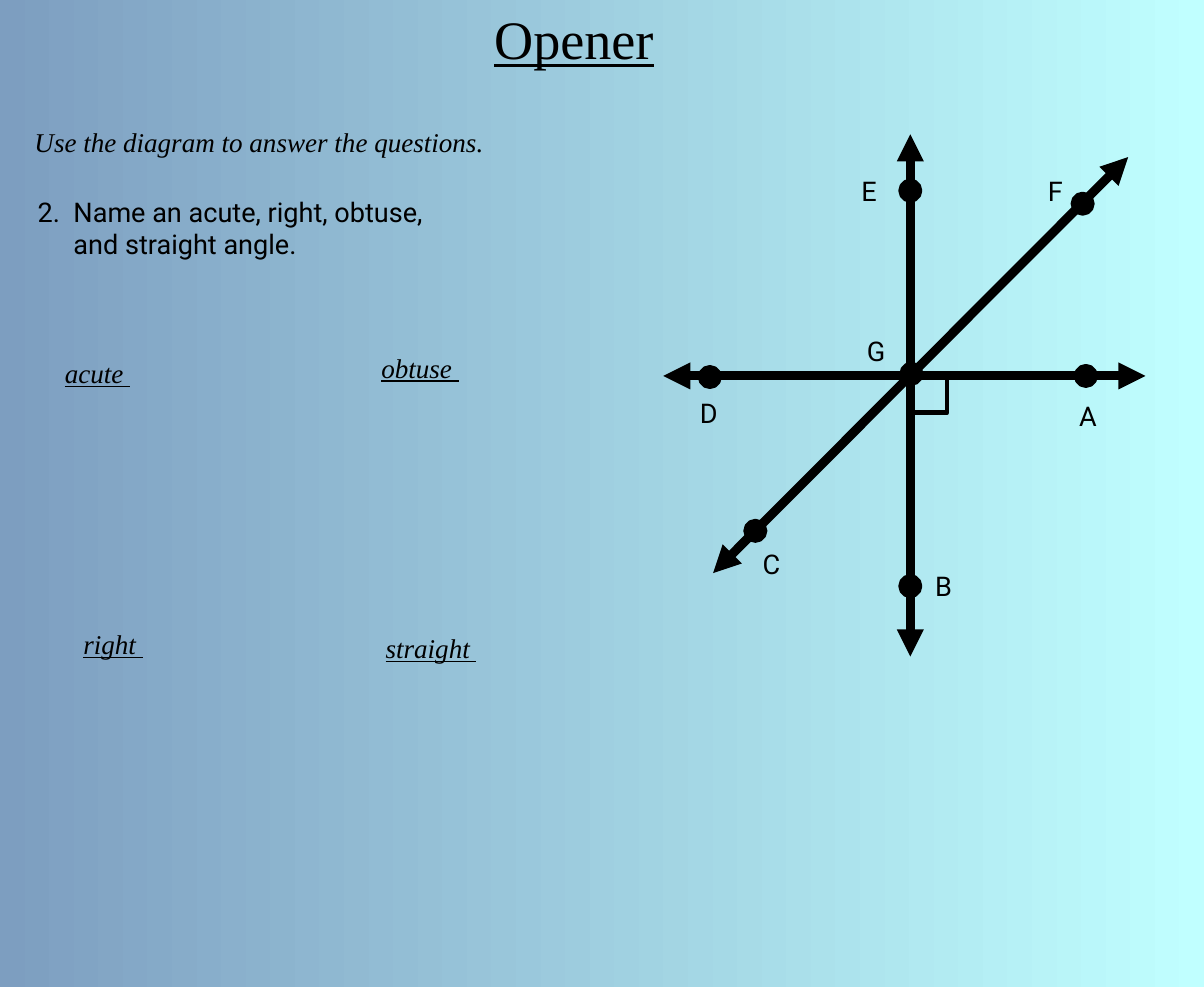
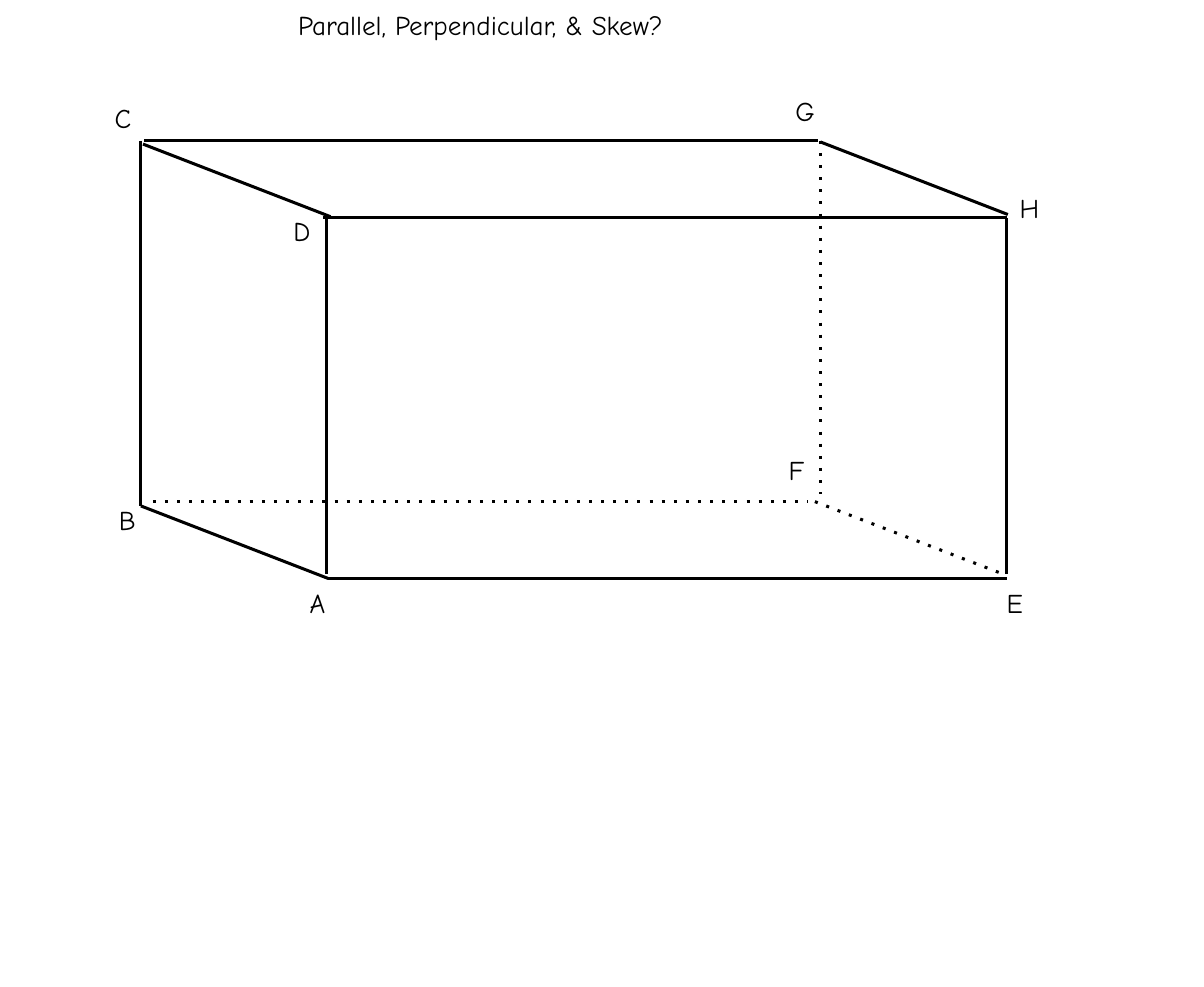
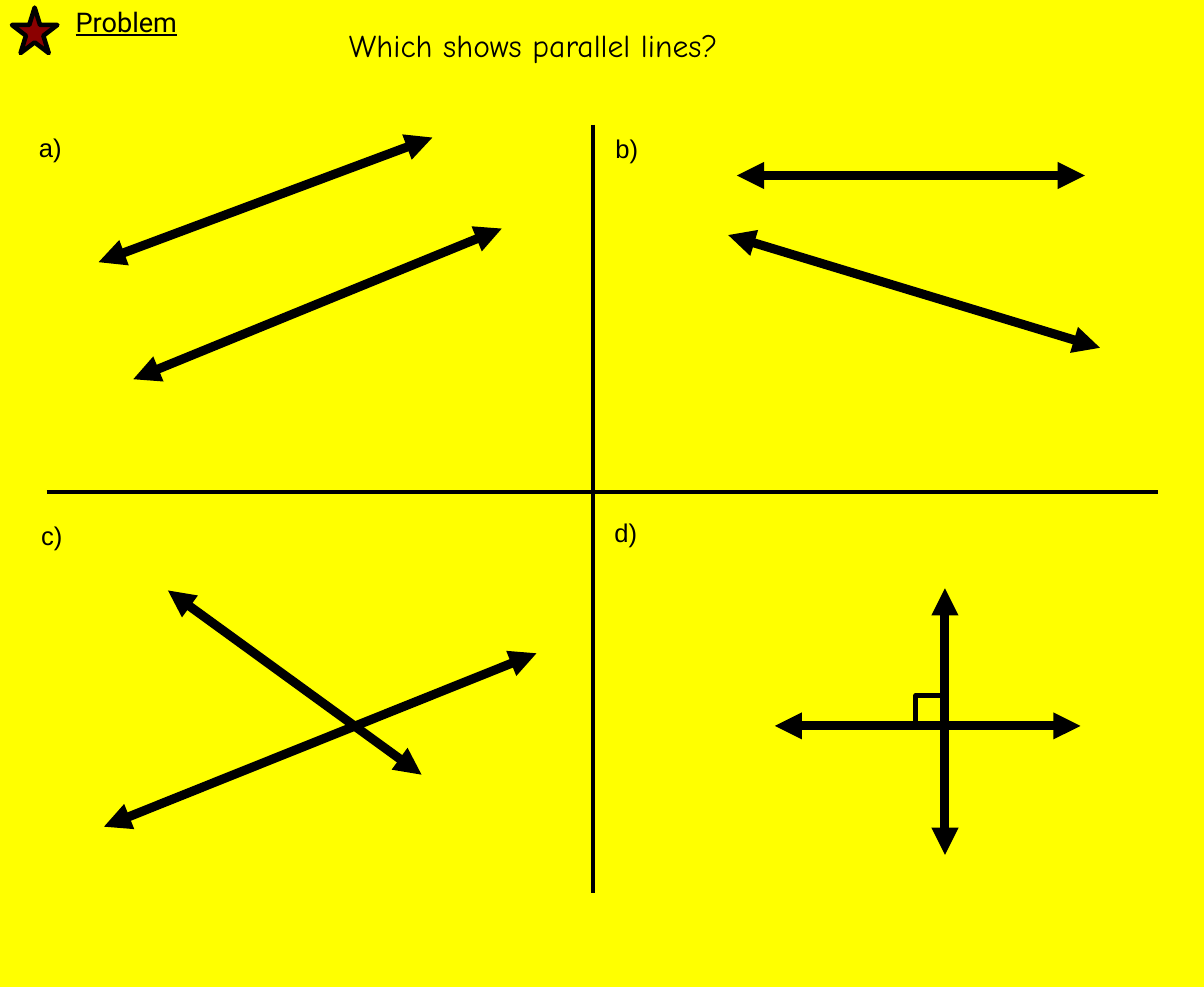
from lxml import etree
from pptx import Presentation, util as u
from pptx.dml.color import RGBColor
from pptx.enum import shapes as kinds, text as styles
from pptx.oxml import ns

PX = 9144
COLORS = {"ink": "000000", "dusk": "7D9EC0", "ice": "C0FFFF", "paper": "FFFFFF",
          "yellow": "FFFF00", "star": "8B0000"}
SERIF, SANS, HAND, PLAIN = "Times New Roman", "Roboto", "Comic Neue", "Arial"

OPENER_TITLE = ("Opener", (446, 0, 478, 71))
INSTRUCTION = ("Use the diagram to answer the questions.", (22, 111, 593, 40))
QUESTION = (["2.\tName an acute, right, obtuse,", "and straight angle."], (25, 175, 523, 71))
QUESTION_INDENT = 33
ANGLE_KINDS = [
    ("acute ", (50, 324, 97, 40)),
    ("obtuse ", (342, 319, 112, 40)),
    ("right ", (67, 574, 89, 40)),
    ("straight ", (346, 578, 130, 40)),
]
DIAGRAM_LINES = [(840, 606, 840, 124), (658, 529, 1041, 145), (612, 347, 1057, 347)]
DIAGRAM_POINTS = {
    "G": ((841, 345), (790, 304)),
    "C": ((697, 490), (694, 500)),
    "D": ((655, 348), (636, 361)),
    "E": ((840, 176), (785, 156)),
    "F": ((999, 188), (957, 156)),
    "A": ((1002, 347), (986, 364)),
    "B": ((840, 541), (853, 521)),
}
POINT_SIZE = 18
DIAGRAM_CORNER = (841, 348, 33, 33)

PRISM_TITLE = ("Parallel, Perpendicular, & Skew?", (265, 3, 523, 40))
SOLID_EDGES = {
    "CB": (130, 130, 130, 467), "BA": (130, 467, 303, 534), "AE": (303, 534, 929, 534),
    "HD": (929, 201, 298, 201), "DA": (301, 201, 301, 530), "GC": (755, 130, 133, 130),
    "CD": (132, 133, 305, 200), "GH": (757, 131, 930, 198), "EH": (929, 530, 929, 201),
}
HIDDEN_EDGES = {
    "GF": (757, 130, 757, 456), "BF": (141, 463, 745, 463), "FE": (752, 463, 926, 530),
}
PRISM_LABELS = {
    "A": (276, 536), "B": (100, 460), "C": (96, 89), "D": (261, 193),
    "E": (919, 536), "F": (718, 414), "G": (724, 82), "H": (931, 172),
}
LABEL_SIZE = (40, 40)

PROBLEM_TITLE = ("Which shows parallel lines?", (312, 19, 526, 45))
PROBLEM_TAG = ("Problem", (60, 0, 173, 40))
STAR_BOX = (11, 7, 42, 42)
DIVIDERS = [(547, 115, 547, 824), (43, 454, 1069, 454)]
CHOICES = [
    ("a)", (26, 117), [(91, 242, 399, 127), (123, 350, 463, 211)]),
    ("b)", (558, 118), [(680, 162, 1001, 162), (672, 217, 1015, 321)]),
    ("c)", (28, 475), [(155, 545, 389, 715), (96, 763, 495, 603)]),
    ("d)", (557, 472), [(872, 543, 872, 789), (715, 670, 997, 670)]),
]
CHOICE_SIZE = (75, 39)
CHOICE_CORNER = (845, 642, 27, 27)


def rgb(name):
    return RGBColor.from_string(COLORS[name])


def emu(lengths):
    return [length * PX for length in lengths]


def write(slide, content, box, font=SANS, size=18, italic=False, underline=False,
          hanging=0, title=False):
    if title:
        holder = slide.shapes.title
        holder.left, holder.top, holder.width, holder.height = emu(box)
    else:
        holder = slide.shapes.add_textbox(*emu(box))
    frame = holder.text_frame
    frame.word_wrap = True
    frame.auto_size = styles.MSO_AUTO_SIZE.SHAPE_TO_FIT_TEXT
    frame.vertical_anchor = styles.MSO_ANCHOR.TOP
    rows = [content] if isinstance(content, str) else content
    frame.text = "\n".join(rows)
    for number, paragraph in enumerate(frame.paragraphs):
        paragraph.alignment = styles.PP_ALIGN.LEFT
        if hanging:
            properties = paragraph._p.get_or_add_pPr()
            properties.set("marL", str(hanging * PX))
            properties.set("indent", str(0 if number else -hanging * PX))
        for run in paragraph.runs:
            run.font.name, run.font.size = font, u.Pt(size)
            run.font.italic, run.font.underline = italic, underline
            run.font.color.rgb = rgb("ink")


def draw_line(shapes, ends, width, arrows=False, dotted=False):
    line = shapes.add_connector(kinds.MSO_CONNECTOR.STRAIGHT, *emu(ends))
    line.line.width = u.Pt(width)
    line.line.color.rgb = rgb("ink")
    stroke = line.line._get_or_add_ln()
    if dotted:
        etree.SubElement(stroke, ns.qn("a:prstDash"), val="dot")
    if arrows:
        for end in ("a:headEnd", "a:tailEnd"):
            etree.SubElement(stroke, ns.qn(end), type="triangle")
    etree.SubElement(line._element.spPr, ns.qn("a:effectLst"))


def draw_shape(slide, kind, box, fill=None):
    figure = slide.shapes.add_shape(kind, *emu(box))
    figure.shadow.inherit = False
    figure.line.color.rgb = rgb("ink")
    figure.line.width = u.Pt(3)
    if fill:
        figure.fill.solid()
        figure.fill.fore_color.rgb = rgb(fill)
    else:
        figure.fill.background()


def new_slide(deck, title, background, **title_format):
    slide = deck.slides.add_slide(deck.slide_layouts[5])
    fill = slide.background.fill
    if isinstance(background, tuple):
        fill.gradient()
        fill.gradient_angle = 0
        for stop, name in zip(fill.gradient_stops, background):
            stop.color.rgb = rgb(name)
    else:
        fill.solid()
        fill.fore_color.rgb = rgb(background)
    write(slide, *title, title=True, **title_format)
    return slide


def build_opener(deck):
    slide = new_slide(deck, OPENER_TITLE, ("dusk", "ice"), font=SERIF, size=36, underline=True)
    for ends in DIAGRAM_LINES:
        draw_line(slide.shapes, ends, 6, arrows=True)
    for letter, ((x, y), corner) in DIAGRAM_POINTS.items():
        dot = (x - POINT_SIZE // 2, y - POINT_SIZE // 2, POINT_SIZE, POINT_SIZE)
        draw_shape(slide, kinds.MSO_SHAPE.OVAL, dot, fill="ink")
        write(slide, letter, corner + LABEL_SIZE)
    write(slide, *INSTRUCTION, font=SERIF, italic=True)
    write(slide, *QUESTION, hanging=QUESTION_INDENT)
    draw_shape(slide, kinds.MSO_SHAPE.RECTANGLE, DIAGRAM_CORNER)
    for angle, box in ANGLE_KINDS:
        write(slide, angle, box, font=SERIF, italic=True, underline=True)


def build_prism(deck):
    slide = new_slide(deck, PRISM_TITLE, "paper", font=HAND)
    prism = slide.shapes.add_group_shape()
    for edges, dotted in ((SOLID_EDGES, False), (HIDDEN_EDGES, True)):
        for ends in edges.values():
            draw_line(prism.shapes, ends, 2, dotted=dotted)
    for letter, corner in PRISM_LABELS.items():
        write(slide, letter, corner + LABEL_SIZE, font=HAND)


def build_problem(deck):
    slide = new_slide(deck, PROBLEM_TITLE, "yellow", font=HAND, size=21)
    write(slide, *PROBLEM_TAG, underline=True)
    draw_shape(slide, kinds.MSO_SHAPE.STAR_5_POINT, STAR_BOX, fill="star")
    for ends in DIVIDERS:
        draw_line(slide.shapes, ends, 3)
    for letter, corner, pair in CHOICES:
        write(slide, letter, corner + CHOICE_SIZE, font=PLAIN, size=17)
        for ends in pair:
            draw_line(slide.shapes, ends, 6, arrows=True)
    draw_shape(slide, kinds.MSO_SHAPE.RECTANGLE, CHOICE_CORNER)


def main():
    deck = Presentation()
    deck.slide_width, deck.slide_height = emu((1111, 911))
    for build in (build_opener, build_prism, build_problem):
        build(deck)
    deck.save("out.pptx")


if __name__ == "__main__":
    main()
